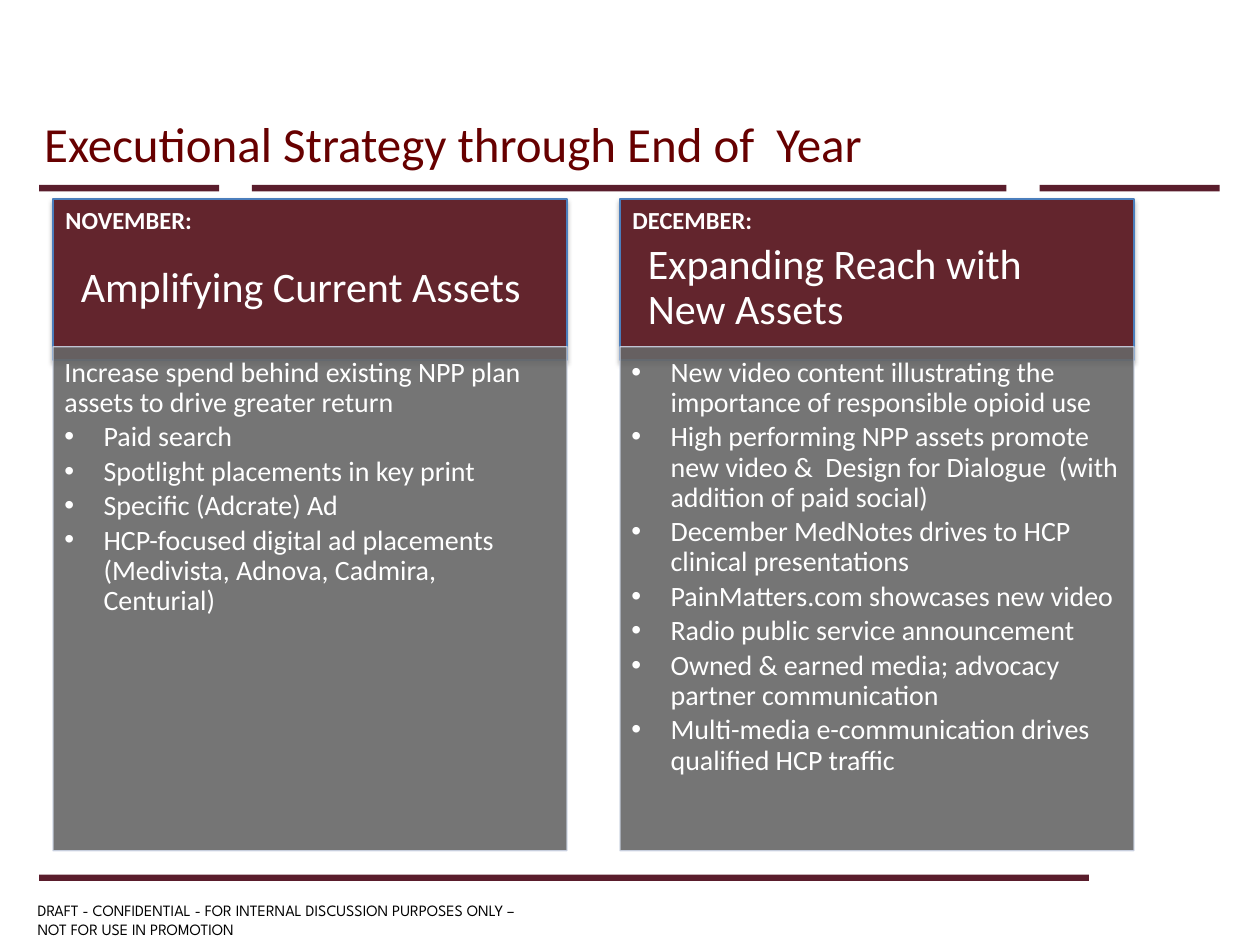
"""Build the executional strategy slide with its November and December panels."""
from lxml import etree
from pptx import Presentation
from pptx.dml.color import RGBColor
from pptx.enum.shapes import MSO_SHAPE as SHAPE
from pptx.enum.text import MSO_ANCHOR as ANCHOR, MSO_AUTO_SIZE as AUTO, PP_ALIGN as ALIGN
from pptx.oxml import parse_xml
from pptx.oxml.ns import nsdecls, qn
from pptx.util import Cm, Pt

COLORS = {"rule": "5A1D2C", "title": "670000", "header": "63252D", "edge": "4B7EBC",
          "body": "676767", "body_edge": "CBD3E3", "white": "FFFFFF", "black": "000000"}
SHADOW = (f'<a:effectLst {nsdecls("a")}><a:outerShdw blurRad="39370" dist="22860" dir="5400000" '
          'rotWithShape="0"><a:srgbClr val="000000"><a:alpha val="35000"/></a:srgbClr>'
          '</a:outerShdw></a:effectLst>')


def write(sp, paras, size, color, font="Calibri", bold=False, anchor=ANCHOR.TOP,
          insets=(0.25, 0.13, 0.25, 0.13), spacing=None, after=0, first_bullet=None):
    tf = sp.text_frame
    tf.word_wrap, tf.auto_size, tf.vertical_anchor = True, AUTO.NONE, anchor
    tf.margin_left, tf.margin_top, tf.margin_right, tf.margin_bottom = map(Cm, insets)
    for i, text in enumerate(paras):
        p = tf.paragraphs[0] if i == 0 else tf.add_paragraph()
        p.text, p.alignment = text, ALIGN.LEFT
        p.space_before, p.space_after = Pt(0), Pt(after)
        if spacing:
            p.line_spacing = spacing
        if first_bullet is not None and i >= first_bullet:
            pPr = p._p.get_or_add_pPr()
            pPr.set("marL", str(Cm(0.79)))
            pPr.set("indent", str(-Cm(0.79)))
            etree.SubElement(pPr, qn("a:buFont"), typeface="Arial")
            etree.SubElement(pPr, qn("a:buChar"), char="•")
        for r in p.runs:
            r.font.size, r.font.name, r.font.bold = Pt(size), font, bold
            r.font.color.rgb = RGBColor.from_string(COLORS[color])


def add_rect(box, fill, line=None, alpha=None):
    sp = s.shapes.add_shape(SHAPE.RECTANGLE, *map(Cm, box))
    sp.shadow.inherit = False
    sp.fill.solid()
    sp.fill.fore_color.rgb = RGBColor.from_string(COLORS[fill])
    if line:
        sp.line.color.rgb = RGBColor.from_string(COLORS[line])
        sp.line.width = Pt(0.75)
    else:
        sp.line.fill.background()
    if alpha:
        for clr in sp._element.spPr.iter(qn("a:srgbClr")):
            etree.SubElement(clr, qn("a:alpha"), val=str(alpha * 1000))
    return sp


prs = Presentation()
prs.slide_width, prs.slide_height = Cm(25.4), Cm(19.05)
s = prs.slides.add_slide(prs.slide_layouts[5])

for left, top, width in [(0.79, 17.63, 21.16), (0.79, 3.73, 3.63),
                         (20.96, 3.73, 3.63), (5.08, 3.73, 15.21)]:
    add_rect((left, top, width, 0.13), "rule")

title = s.shapes.title
title.left, title.top, title.width, title.height = Cm(0.64), Cm(0.79), Cm(24.08), Cm(2.82)
write(title, ["Executional Strategy through End of  Year"], 28, "title", anchor=ANCHOR.BOTTOM)

panels = [
    ("NOVEMBER:", "Amplifying Current Assets", 1, [
        "Increase spend behind existing NPP plan assets to drive greater return",
        "Paid search",
        "Spotlight placements in key print",
        "Specific (Adcrate) Ad",
        "HCP-focused digital ad placements (Medivista, Adnova, Cadmira, Centurial)"]),
    ("DECEMBER:", "Expanding Reach with New Assets", 0, [
        "New video content illustrating the importance of responsible opioid use",
        "High performing NPP assets promote new video &  Design for Dialogue  "
        "(with addition of paid social)",
        "December MedNotes drives to HCP clinical presentations",
        "PainMatters.com showcases new video",
        "Radio public service announcement",
        "Owned & earned media; advocacy partner communication",
        "Multi-media e-communication drives qualified HCP traffic"]),
]
TOP, BODY_TOP, WIDTH, BODY_HEIGHT = 4.01, 6.99, 10.36, 10.16
for i, (month, heading, first_bullet, points) in enumerate(panels):
    left = 1.07 + i * 11.43
    header = add_rect((left, TOP, WIDTH, 3.25), "header", "edge")
    spPr = header._element.spPr
    spPr.replace(spPr.find(qn("a:effectLst")), parse_xml(SHADOW))
    sp = s.shapes.add_textbox(*map(Cm, (left, TOP, WIDTH, 3.61)))
    write(sp, [heading], 24, "white", anchor=ANCHOR.MIDDLE,
          insets=(0.56, 0.3, 0.56, 0.3), spacing=0.9)

    body = (left, BODY_TOP, WIDTH, BODY_HEIGHT)
    add_rect(body, "body", "body_edge", alpha=90)
    sp = s.shapes.add_textbox(*map(Cm, body))
    write(sp, points, 16, "white", insets=(0.23, 0.23, 0.3, 0.36),
          spacing=0.9, after=2.4, first_bullet=first_bullet)

    sp = s.shapes.add_textbox(*map(Cm, (left, TOP, 3.81, 0.86)))
    write(sp, [month], 14, "white", bold=True)

sp = s.shapes.add_textbox(Cm(0.51), Cm(18.03), Cm(13.46), Cm(1.02))
write(sp, ["DRAFT - CONFIDENTIAL - FOR INTERNAL DISCUSSION PURPOSES ONLY – \v"
           "NOT FOR USE IN PROMOTION"], 9, "black", font="League Spartan")

prs.save("out.pptx")
